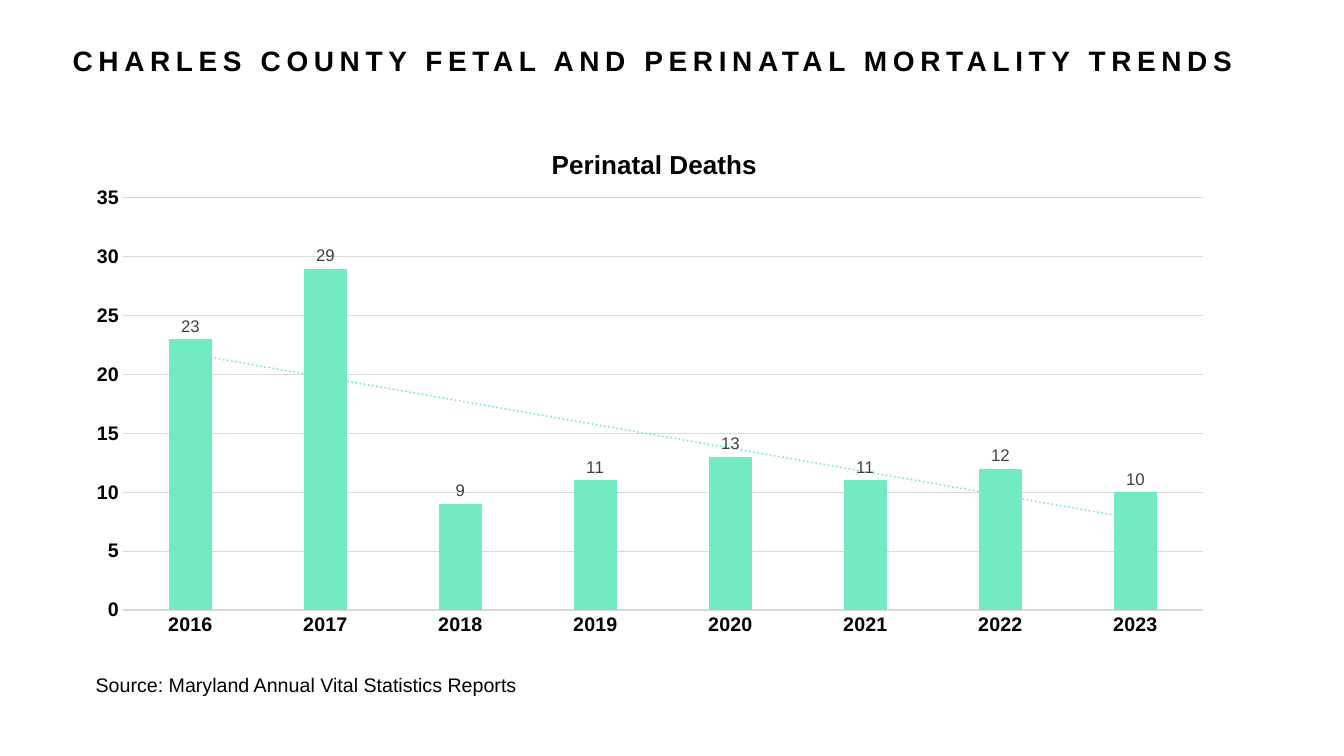
from pptx import Presentation
from pptx.chart.data import CategoryChartData
from pptx.dml.color import RGBColor
from pptx.enum.chart import XL_CHART_TYPE as ChartType
from pptx.enum.chart import XL_LABEL_POSITION as LabelPos
from pptx.enum.chart import XL_TICK_MARK as Tick
from pptx.enum.text import MSO_ANCHOR as Anchor
from pptx.enum.text import MSO_AUTO_SIZE as AutoSize
from pptx.enum.text import PP_ALIGN as Align
from pptx.oxml import parse_xml
from pptx.oxml.ns import nsdecls
from pptx.util import Cm, Pt

YEARS = [str(year) for year in range(2016, 2024)]
DEATHS = [23, 29, 9, 11, 13, 11, 12, 10]


def rgb(color):
    return RGBColor.from_string(color)


def manual_layout(x, y, w=None, h=None):
    """Return a c:layout element; all values are fractions of the chart."""
    target = '<c:layoutTarget val="inner"/>' if w else ""
    size = f'<c:w val="{w}"/><c:h val="{h}"/>' if w else ""
    return parse_xml(
        f'<c:layout {nsdecls("c")}><c:manualLayout>{target}'
        '<c:xMode val="edge"/><c:yMode val="edge"/>'
        f'<c:x val="{x}"/><c:y val="{y}"/>{size}'
        '</c:manualLayout></c:layout>')


class TrendSlide:
    FONT = "Arial"
    TEXT = "000000"
    LABEL = "404040"
    GRID = "D9D9D9"
    BAR = "73E9C4"

    def __init__(self, prs):
        self.s = prs.slides.add_slide(prs.slide_layouts[5])

    def style(self, font, size, color=TEXT, bold=False):
        font.name = self.FONT
        font.size = Pt(size)
        font.bold = bold
        font.color.rgb = rgb(color)

    def grid_line(self, line):
        line.color.rgb = rgb(self.GRID)
        line.width = Pt(0.75)

    def title(self, text, left, top, width, height):
        sp = self.s.shapes.title
        sp.left, sp.top = Cm(left), Cm(top)
        sp.width, sp.height = Cm(width), Cm(height)
        tf = sp.text_frame
        tf.text = text
        tf.word_wrap = True
        tf.auto_size = AutoSize.NONE
        tf.vertical_anchor = Anchor.MIDDLE
        tf.margin_left, tf.margin_top = Cm(1.4), Cm(0.74)
        p = tf.paragraphs[0]
        p.alignment = Align.LEFT
        p.line_spacing = 0.9
        r = p.runs[0]
        self.style(r.font, 20, bold=True)
        r.font._element.set("spc", "400")

    def note(self, text, left, top, width, height):
        sp = self.s.shapes.add_textbox(Cm(left), Cm(top), Cm(width), Cm(height))
        tf = sp.text_frame
        tf.text = text
        tf.word_wrap = False
        tf.auto_size = AutoSize.SHAPE_TO_FIT_TEXT
        self.style(tf.paragraphs[0].runs[0].font, 14)

    def column_chart(self, title, cats, values, left, top, width, height):
        data = CategoryChartData()
        data.categories = cats
        data.add_series("Series 1", values)
        chart = self.s.shapes.add_chart(
            ChartType.COLUMN_CLUSTERED, Cm(left), Cm(top), Cm(width),
            Cm(height), data).chart
        self.style(chart.font, 10)
        chart.has_legend = False
        self.chart_title(chart, title)
        self.axes(chart)

        plot = chart.plots[0]
        plot.gap_width, plot.overlap = 219, -27
        plot.vary_by_categories = False
        ser = plot.series[0]
        ser.format.fill.solid()
        ser.format.fill.fore_color.rgb = rgb(self.BAR)
        labels = ser.data_labels
        labels.show_value = True
        labels.position = LabelPos.OUTSIDE_END
        self.style(labels.font, 12, self.LABEL)
        self.trend_line(ser)

        area = chart._chartSpace.chart.plotArea
        for old in area.xpath("c:layout"):
            area.remove(old)
        area.insert(0, manual_layout(0.042, 0.145, 0.9375, 0.785))

    def chart_title(self, chart, text):
        chart.has_title = True
        title = chart.chart_title
        title.include_text_in_layout = False
        tf = title.text_frame
        tf.text = text
        self.style(tf.paragraphs[0].runs[0].font, 18.6, bold=True)
        for old in title._element.xpath("c:layout"):
            title._element.remove(old)
        title._element.xpath("c:tx")[0].addnext(manual_layout(0.41, 0.04))

    def axes(self, chart):
        for axis in (chart.category_axis, chart.value_axis):
            axis.major_tick_mark = axis.minor_tick_mark = Tick.NONE
            self.style(axis.tick_labels.font, 14, bold=True)
        self.grid_line(chart.category_axis.format.line)
        val = chart.value_axis
        val.minimum_scale, val.maximum_scale, val.major_unit = 0, 35, 5
        val.format.line.fill.background()
        self.grid_line(val.major_gridlines.format.line)

    def trend_line(self, ser):
        trend = parse_xml(
            f'<c:trendline {nsdecls("c", "a")}><c:spPr>'
            f'<a:ln w="{Pt(1.5)}" cap="rnd"><a:solidFill>'
            f'<a:srgbClr val="{self.BAR}"/></a:solidFill>'
            '<a:prstDash val="sysDot"/></a:ln></c:spPr>'
            '<c:trendlineType val="linear"/><c:dispRSqr val="0"/>'
            '<c:dispEq val="0"/></c:trendline>')
        ser._element.xpath("c:cat")[0].addprevious(trend)


def main():
    prs = Presentation()
    prs.slide_width, prs.slide_height = Cm(33.87), Cm(19.05)
    slide = TrendSlide(prs)
    slide.title("CHARLES COUNTY FETAL AND PERINATAL MORTALITY TRENDS",
                0.43, -0.53, 32.2, 3.6)
    slide.column_chart("Perinatal Deaths", YEARS, DEATHS,
                       1.88, 3.07, 29.03, 13.23)
    slide.note("Source: Maryland Annual Vital Statistics Reports",
               2.16, 16.84, 11.18, 0.86)
    prs.save("out.pptx")


if __name__ == "__main__":
    main()
